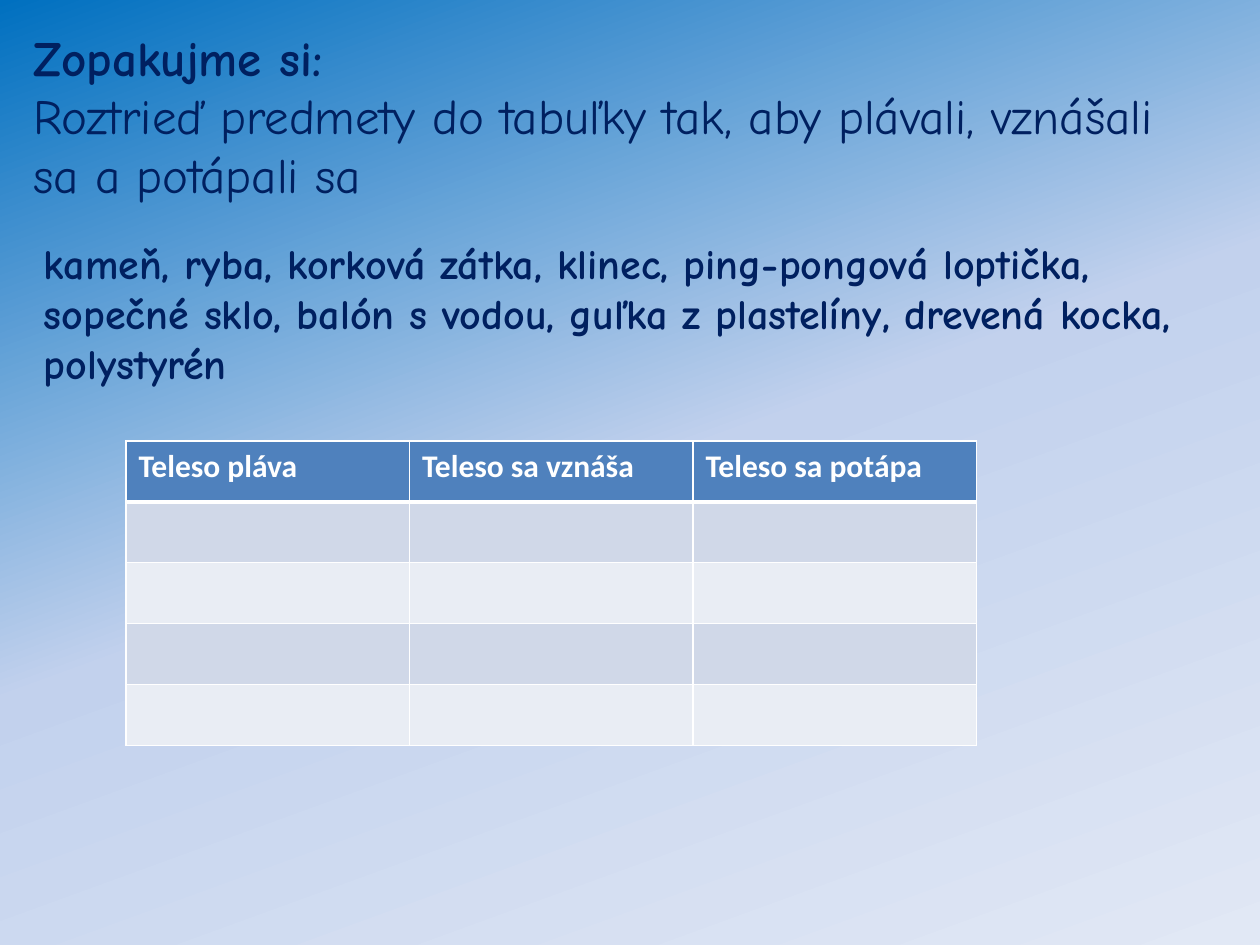
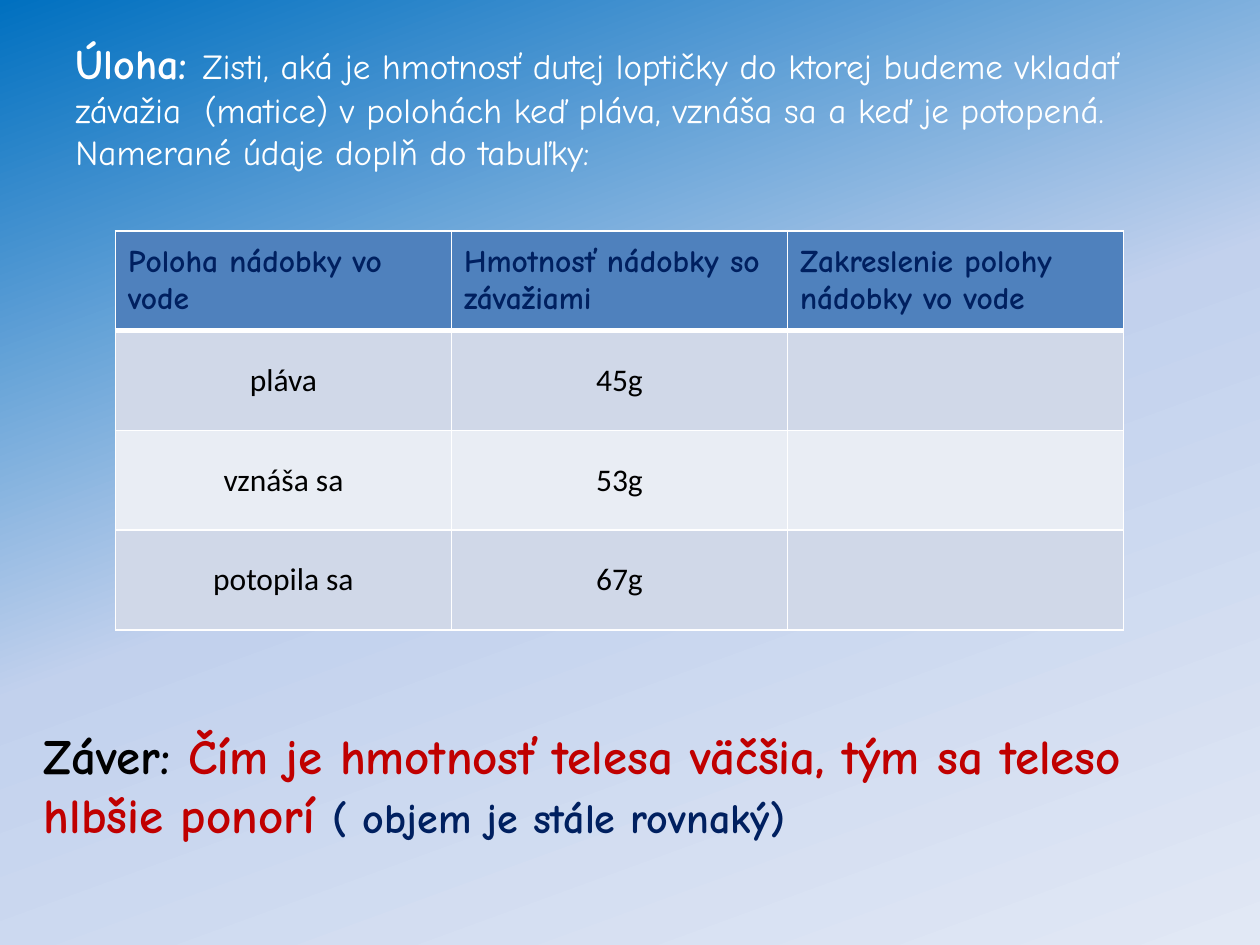
import copy
import pptx
import pptx.util
import pptx.dml.color
import pptx.enum.text
import pptx.oxml
import pptx.oxml.ns
from lxml import etree

HAND, PLAIN = "Comic Neue", "Calibri"
NAVY, WHITE, BLACK, RED = "002060", "FFFFFF", "000000", "C00000"
HEAD, BANDS = "4F81BD", ("D0D8E8", "E9EDF4")
SKY = ((0, "0070C0"), (0.5, "C2D1ED"), (1, "E1E8F5"))
ANGLE = 70
ALIGN = pptx.enum.text.PP_ALIGN
MIDDLE = pptx.enum.text.MSO_ANCHOR.MIDDLE
TOP = pptx.enum.text.MSO_ANCHOR.TOP


def grid(count):
    return pptx.util.Emu(int(pptx.util.Inches(1) * count / 12))


def paint(color, shade):
    color.rgb = pptx.dml.color.RGBColor.from_string(shade)


def style(font, size, shade, bold, name=HAND):
    font.name, font.size, font.bold = name, pptx.util.Pt(size), bold
    paint(font.color, shade)


def write(para, runs):
    for words, *look in runs:
        run = para.add_run()
        run.text = words
        style(para.font if len(runs) == 1 else run.font, *look)


def add_page(deck):
    page = deck.slides.add_slide(deck.slide_layouts[6])
    fill = page.background.fill
    fill.gradient()
    fill.gradient_angle = 360 - ANGLE
    stops = page.element.find(".//" + pptx.oxml.ns.qn("a:gsLst"))
    stops.append(copy.deepcopy(stops[-1]))
    for stop, (place, shade) in zip(fill.gradient_stops, SKY):
        stop.position = place
        paint(stop.color, shade)
    return page


def add_text(page, area, *paras):
    frame = page.shapes.add_textbox(*map(grid, area)).text_frame
    frame.word_wrap = True
    frame.auto_size = pptx.enum.text.MSO_AUTO_SIZE.SHAPE_TO_FIT_TEXT
    for spot, runs in enumerate(paras):
        write(frame.add_paragraph() if spot else frame.paragraphs[0], runs)


def add_edges(cell, row):
    widths = {"L": 1, "R": 1, "T": 3 if row == 1 else 1, "B": 1 if row else 3}
    props = cell._tc.get_or_add_tcPr()
    for spot, (side, width) in enumerate(widths.items()):
        line = etree.Element(pptx.oxml.ns.qn("a:ln" + side), w=str(pptx.util.Pt(width)))
        fill = etree.SubElement(line, pptx.oxml.ns.qn("a:solidFill"))
        etree.SubElement(fill, pptx.oxml.ns.qn("a:srgbClr"), val=WHITE)
        props.insert(spot, line)


def add_table(page, area, rows, head, anchor):
    table = page.shapes.add_table(len(rows), len(rows[0]), *map(grid, area)).table
    for r, row in enumerate(rows):
        for c, words in enumerate(row):
            cell = table.cell(r, c)
            cell.fill.solid()
            paint(cell.fill.fore_color, BANDS[(r - 1) % 2] if r else HEAD)
            add_edges(cell, r)
            if words:
                cell.vertical_anchor = anchor
                para = cell.text_frame.paragraphs[0]
                para.alignment = ALIGN.CENTER if r else ALIGN.LEFT
                write(para, [(words, 18, *(head if r == 0 else (BLACK, False, PLAIN)))])


def sort_page(deck):
    page = add_page(deck)
    add_text(page, (2, 2, 113, 18),
             [("Zopakujme si:", 28, NAVY, True)],
             [("Roztrieď predmety do tabuľky tak, aby plávali, vznášali sa a potápali sa",
               28, NAVY, False)])
    rows = [("Teleso pláva", "Teleso sa vznáša", "Teleso sa potápa")] + [("",) * 3] * 4
    add_table(page, (12, 42, 81, 29), rows, (WHITE, True, PLAIN), TOP)
    add_text(page, (3, 22, 111, 15.75),
             [("kameň, ryba, korková zátka, klinec, ping-pongová loptička, sopečné sklo, "
               "balón s vodou, guľka z plastelíny, drevená kocka, polystyrén",
               24, NAVY, True)])


def mass_page(deck):
    page = add_page(deck)
    add_text(page, (6, 3, 105, 14.25),
             [("Úloha: ", 24, WHITE, True),
              ("Zisti, aká je hmotnosť dutej loptičky do ktorej budeme vkladať "
               "závažia  (matice) v polohách keď pláva, vznáša sa a keď je potopená. "
               "Namerané údaje doplň do tabuľky:", 20, WHITE, False)])
    rows = [("Poloha nádobky vo vode", "Hmotnosť nádobky so závažiami",
             "Zakreslenie polohy nádobky vo vode"),
            ("pláva", "45g", ""),
            ("vznáša sa", "53g", ""),
            ("potopila sa", "67g", "")]
    add_table(page, (11, 22, 96, 38), rows, (NAVY, True), MIDDLE)
    add_text(page, (3, 68.5, 108, 12.5),
             [("Záver: ", 28, BLACK, True),
              ("Čím je hmotnosť telesa väčšia, tým sa teleso hlbšie ponorí ", 28, RED, True),
              ("( objem je stále rovnaký)", 24, NAVY, True)])


def main():
    deck = pptx.Presentation()
    deck.slide_width, deck.slide_height = grid(120), grid(90)
    sort_page(deck)
    mass_page(deck)
    deck.save("out.pptx")


if __name__ == "__main__":
    main()
